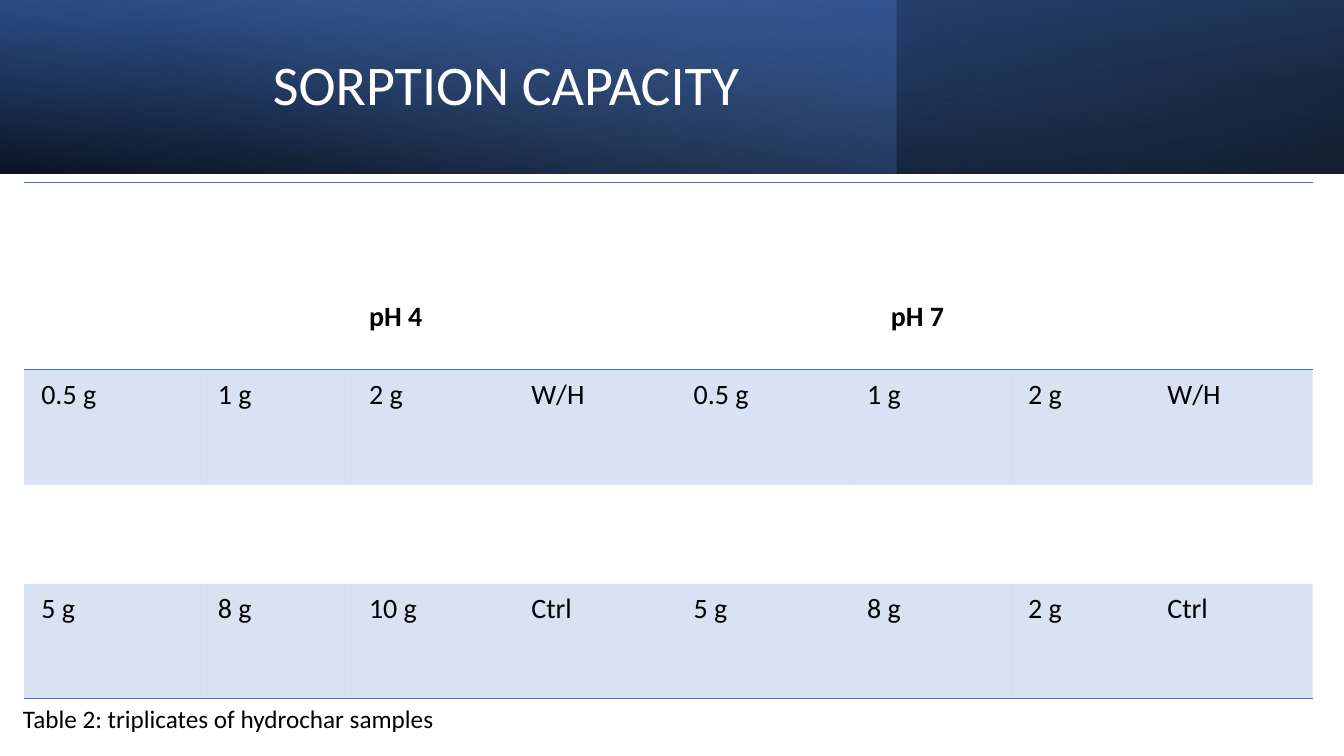
import dataclasses

import lxml.etree
import pptx
import pptx.dml.color
import pptx.enum.shapes
import pptx.enum.text
import pptx.oxml.ns
import pptx.util

Cm = pptx.util.Cm
Pt = pptx.util.Pt
qn = pptx.oxml.ns.qn
ALIGN = pptx.enum.text.PP_ALIGN
ANCHOR = pptx.enum.text.MSO_ANCHOR
NO_GRID_STYLE = "{2D5ABB26-0587-4C30-8999-92F81FD0307C}"


@dataclasses.dataclass(frozen=True)
class Theme:
    font: str = "Calibri"
    black: str = "000000"
    white: str = "FFFFFF"
    blue: str = "4472C4"
    navy: str = "2F5597"
    sky: str = "8FAADC"
    title_size: int = 40
    table_size: int = 20
    caption_size: int = 18


def set_color(color, value, opacity=100):
    color.rgb = pptx.dml.color.RGBColor.from_string(value)
    if opacity < 100:
        for clr in color._xFill.iter(qn("a:srgbClr")):
            lxml.etree.SubElement(clr, qn("a:alpha"), val=str(opacity * 1000))


def write(tf, text, *, font, size, color, bold=False, align=ALIGN.LEFT,
          line_spacing=None, space_after=None):
    p = tf.paragraphs[0]
    p.alignment = align
    p.line_spacing = line_spacing
    p.space_after = space_after
    r = p.add_run()
    r.text = text
    r.font.name = font
    r.font.size = Pt(size)
    r.font.bold = bold
    set_color(r.font.color, color)


class SlideBuilder:
    def __init__(self, s, theme):
        self.s = s
        self.theme = theme

    def band(self, width, height, stops, angle, flip=False, rotation=0):
        sp = self.s.shapes.add_shape(pptx.enum.shapes.MSO_SHAPE.RECTANGLE,
                                     0, 0, width, height)
        sp.shadow.inherit = False
        sp.line.fill.background()
        sp.rotation = rotation
        if flip:
            sp._element.spPr.find(qn("a:xfrm")).set("flipH", "1")
        sp.fill.gradient()
        sp.fill.gradient_angle = 360 - angle
        for stop, (position, color, opacity) in zip(sp.fill.gradient_stops, stops):
            stop.position = position
            stop.color.rgb = pptx.dml.color.RGBColor.from_string(color)
            clr = stop._gs.find(qn("a:srgbClr"))
            lxml.etree.SubElement(clr, qn("a:alpha"), val=str(opacity * 1000))

    def text(self, box, text, *, wrap=True, anchor=ANCHOR.TOP, **style):
        tf = self.s.shapes.add_textbox(*box).text_frame
        tf.word_wrap = wrap
        tf.vertical_anchor = anchor
        write(tf, text, font=self.theme.font, **style)

    def border(self, cell, side):
        ln = lxml.etree.SubElement(cell._tc.get_or_add_tcPr(), qn("a:ln" + side),
                                   w=str(Pt(1)))
        fill = lxml.etree.SubElement(ln, qn("a:solidFill"))
        lxml.etree.SubElement(fill, qn("a:srgbClr"), val=self.theme.blue)

    def cell(self, cell, text, *, sides="", shaded=False, anchor=ANCHOR.TOP, **style):
        cell.margin_left, cell.margin_top = Cm(0.43), Cm(0.13)
        cell.margin_right, cell.margin_bottom = Cm(1.09), Cm(0.91)
        cell.vertical_anchor = anchor
        for side in sides:
            self.border(cell, side)
        if shaded:
            cell.fill.solid()
            cell.fill.fore_color.rgb = pptx.dml.color.RGBColor.from_string(self.theme.blue)
            clr = next(cell._tc.tcPr.find(qn("a:solidFill")).iter(qn("a:srgbClr")))
            lxml.etree.SubElement(clr, qn("a:alpha"), val="20000")
        else:
            cell.fill.background()
        if text:
            write(cell.text_frame, text, font=self.theme.font,
                  size=self.theme.table_size, color=self.theme.black,
                  line_spacing=1.07, **style)

    def table(self, left, top, widths, heights, rows):
        frame = self.s.shapes.add_table(len(rows), len(widths), left, top,
                                        sum(widths), sum(heights))
        table = frame.table
        table.first_row = table.horz_banding = False
        table._tbl.tblPr.find(qn("a:tableStyleId")).text = NO_GRID_STYLE
        for column, width in zip(table.columns, widths):
            column.width = width
        for row, height in zip(table.rows, heights):
            row.height = height
        last = len(rows) - 1
        for i, row in enumerate(rows):
            for j, text in enumerate(row):
                header = i == 0
                self.cell(table.cell(i, j), text,
                          sides="TB" if header else "B" if i == last else "",
                          shaded=i % 2 == 1,
                          anchor=ANCHOR.BOTTOM if header else ANCHOR.TOP,
                          bold=header,
                          align=ALIGN.CENTER if text == "pH 7" else ALIGN.LEFT)


def main():
    theme = Theme()
    prs = pptx.Presentation()
    prs.slide_width, prs.slide_height = Cm(33.87), Cm(19.05)
    slide = SlideBuilder(prs.slides.add_slide(prs.slide_layouts[6]), theme)

    full, height = prs.slide_width, Cm(4.37)
    slide.band(full, height, [(0, theme.black, 96), (1, theme.navy, 100)], 100,
               flip=True, rotation=180)
    slide.band(Cm(22.58), height, [(0, theme.blue, 41), (0.74, theme.sky, 0)], 140)
    slide.band(full, height, [(0, theme.black, 63), (0.78, theme.blue, 15)], 260,
               flip=True)
    slide.text((Cm(2.95), Cm(0.58), Cm(19.61), Cm(3.23)), "SORPTION CAPACITY",
               anchor=ANCHOR.MIDDLE, size=theme.title_size, color=theme.white,
               align=ALIGN.CENTER, line_spacing=0.9)

    widths = [Cm(w) for w in (4.45, 3.81, 4.09, 4.09, 4.37, 4.06, 3.51, 4.09)]
    heights = [Cm(h) for h in (4.72, 2.9, 2.49, 2.9)]
    rows = [
        ["", "", "pH 4", "", "", "pH 7", "", ""],
        ["0.5 g", "1 g", "2 g", "W/H"] * 2,
        [""] * 8,
        ["5 g", "8 g", "10 g", "Ctrl", "5 g", "8 g", "2 g", "Ctrl"],
    ]
    slide.table(Cm(0.61), Cm(4.6), widths, heights, rows)
    slide.text((Cm(0.33), Cm(17.6), Cm(10.85), Cm(1.02)),
               "Table 2: triplicates of hydrochar samples", wrap=False,
               size=theme.caption_size, color=theme.black, space_after=Pt(6))
    prs.save("out.pptx")


if __name__ == "__main__":
    main()
